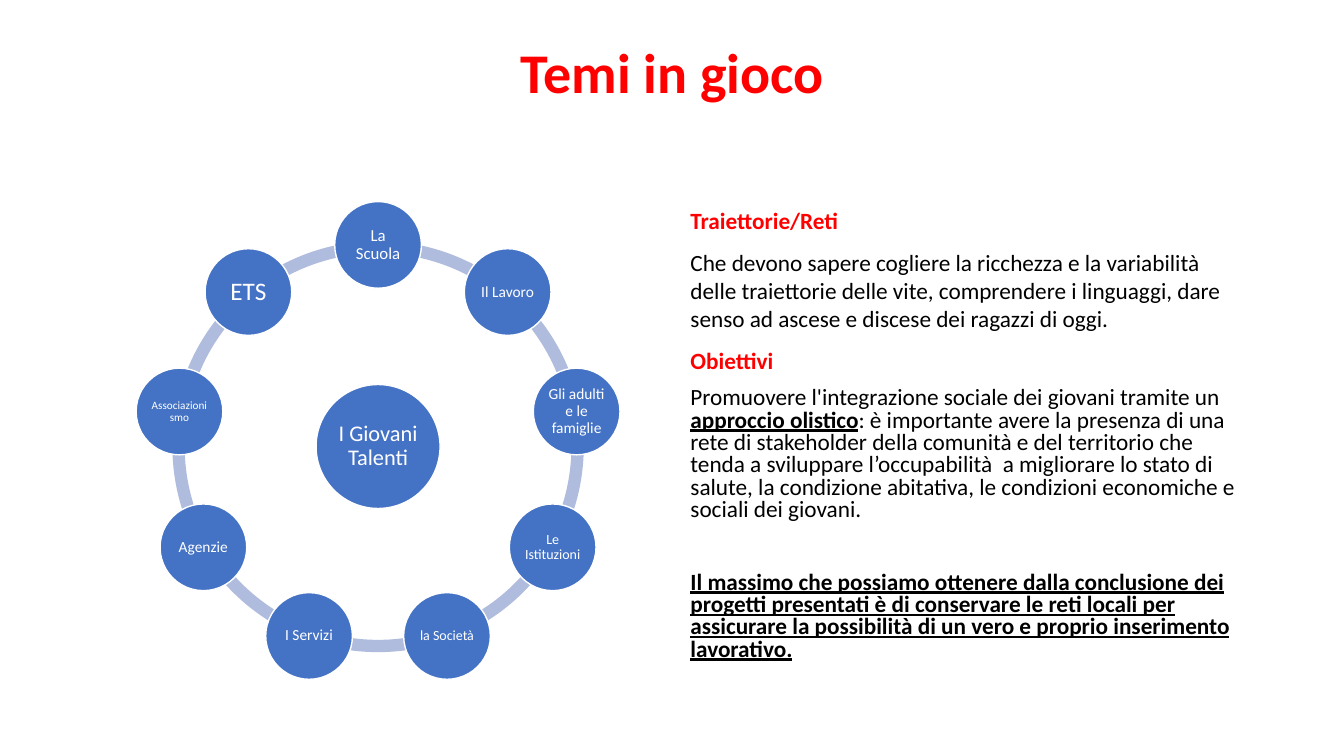
from dataclasses import dataclass
from math import cos, radians, sin

from pptx import Presentation
from pptx.dml.color import RGBColor
from pptx.enum.shapes import MSO_SHAPE as Preset
from pptx.enum.text import MSO_ANCHOR as Anchor, PP_ALIGN as Align
from pptx.shapes.autoshape import Shape
from pptx.slide import Slide
from pptx.text.text import TextFrame, _Paragraph as Paragraph
from pptx.util import Inches, Pt


@dataclass(frozen=True)
class Theme:
    """Colours and type sizes of the slide."""
    font: str = "Calibri"
    accent: str = "FF0000"
    ink: str = "000000"
    paper: str = "FFFFFF"
    node: str = "4472C4"
    ring: str = "B0BCDE"
    title_size: float = 40
    body_size: float = 16.6
    hub_size: float = 16
    large: float = 18
    medium: float = 12
    regular: float = 11
    small: float = 10
    tiny: float = 8


@dataclass(frozen=True)
class Topic:
    """A circle label with its size and inner margin."""
    label: str
    size: float
    margin: float = 0.02


@dataclass(frozen=True)
class Words:
    """A stretch of body text in one style."""
    text: str
    color: str
    bold: bool = False
    underline: bool = False


@dataclass(frozen=True)
class Passage:
    """A body paragraph and its spacing."""
    words: tuple[Words, ...]
    before: float = 10
    leading: float = 1.0


THEME = Theme()
CENTER_X, CENTER_Y = 3.75, 4.43
ORBIT = 2.0
RING_DIAMETER = 4.08
RING_THICKNESS = 0.03
HUB_DIAMETER = 1.23
TOPIC_DIAMETER = 0.86
DEGREES_TO_ADJUSTMENT = 0.6

HUB = Topic("I Giovani Talenti", THEME.hub_size)
TOPICS = (
    Topic("La Scuola", THEME.medium),
    Topic("Il Lavoro", THEME.regular),
    Topic("Gli adulti e le famiglie", THEME.regular),
    Topic("Le Istituzioni", THEME.small, 0.01),
    Topic("la Società", THEME.small, 0.01),
    Topic("I Servizi", THEME.regular),
    Topic("Agenzie", THEME.regular),
    Topic("Associazionismo", THEME.tiny, 0.01),
    Topic("ETS", THEME.large, 0.03),
)
PASSAGES = (
    Passage((Words("Traiettorie/Reti", THEME.accent, bold=True),), before=0),
    Passage((Words(
        "Che devono sapere cogliere la ricchezza e la variabilità delle traiettorie "
        "delle vite, comprendere i linguaggi, dare senso ad ascese e discese dei "
        "ragazzi di oggi.", THEME.ink),)),
    Passage((Words("Obiettivi", THEME.accent, bold=True),)),
    Passage((
        Words("Promuovere l'integrazione sociale dei giovani tramite un ", THEME.ink),
        Words("approccio olistico", THEME.ink, bold=True, underline=True),
        Words(
            ": è importante avere la presenza di una rete di stakeholder della "
            "comunità e del territorio che tenda a sviluppare l’occupabilità  a "
            "migliorare lo stato di salute, la condizione abitativa, le condizioni "
            "economiche e sociali dei giovani.", THEME.ink),
    ), leading=0.8),
    Passage((Words(
        "Il massimo che possiamo ottenere dalla conclusione dei progetti presentati "
        "è di conservare le reti locali per assicurare la possibilità di un vero e "
        "proprio inserimento lavorativo.", THEME.ink, bold=True, underline=True),),
        before=36, leading=0.8),
)


def add_words(paragraph: Paragraph, words: Words, size: float) -> None:
    """Append one styled run."""
    run = paragraph.add_run()
    run.text = words.text
    run.font.name = THEME.font
    run.font.size = Pt(size)
    run.font.bold = words.bold
    run.font.underline = words.underline
    run.font.color.rgb = RGBColor.from_string(words.color)


def add_centered(slide: Slide, preset: Preset, x: float, y: float,
                 diameter: float, fill: str) -> Shape:
    """Draw a flat round shape around a centre point."""
    shape = slide.shapes.add_shape(
        preset, Inches(x - diameter / 2), Inches(y - diameter / 2),
        Inches(diameter), Inches(diameter))
    shape.shadow.inherit = False
    shape.fill.solid()
    shape.fill.fore_color.rgb = RGBColor.from_string(fill)
    shape.line.fill.background()
    return shape


def add_arc(slide: Slide, start: float, end: float) -> None:
    """Draw one segment of the ring between two angles."""
    arc = add_centered(slide, Preset.BLOCK_ARC, CENTER_X, CENTER_Y,
                       RING_DIAMETER, THEME.ring)
    arc.adjustments[0] = start % 360 * DEGREES_TO_ADJUSTMENT
    arc.adjustments[1] = end % 360 * DEGREES_TO_ADJUSTMENT
    arc.adjustments[2] = RING_THICKNESS


def add_topic(slide: Slide, topic: Topic, x: float, y: float, diameter: float) -> None:
    """Draw a labelled circle."""
    circle = add_centered(slide, Preset.OVAL, x, y, diameter, THEME.node)
    circle.line.color.rgb = RGBColor.from_string(THEME.paper)
    circle.line.width = Pt(1)
    frame = circle.text_frame
    frame.word_wrap = True
    frame.vertical_anchor = Anchor.MIDDLE
    frame.margin_left = frame.margin_right = Inches(topic.margin)
    frame.margin_top = frame.margin_bottom = Inches(topic.margin)
    label = frame.paragraphs[0]
    label.alignment = Align.CENTER
    label.line_spacing = 0.9
    add_words(label, Words(topic.label, THEME.paper), topic.size)


def add_wheel(slide: Slide) -> None:
    """Draw the ring, the hub and the topics around it."""
    step = 360 / len(TOPICS)
    angles = [-90 + step * index for index in range(len(TOPICS))]
    for angle in angles:
        add_arc(slide, angle, angle + step)
    add_topic(slide, HUB, CENTER_X, CENTER_Y, HUB_DIAMETER)
    for topic, angle in zip(TOPICS, angles):
        add_topic(slide, topic, CENTER_X + ORBIT * cos(radians(angle)),
                  CENTER_Y + ORBIT * sin(radians(angle)), TOPIC_DIAMETER)


def add_frame(slide: Slide, left: float, top: float,
              width: float, height: float) -> TextFrame:
    """Add a wrapping text box and return its frame."""
    frame = slide.shapes.add_textbox(
        Inches(left), Inches(top), Inches(width), Inches(height)).text_frame
    frame.word_wrap = True
    return frame


def add_title(slide: Slide) -> None:
    """Write the slide heading."""
    heading = add_frame(slide, 0.92, 0.4, 11.5, 1.45).paragraphs[0]
    heading.alignment = Align.CENTER
    heading.line_spacing = 0.9
    add_words(heading, Words("Temi in gioco", THEME.accent, bold=True), THEME.title_size)


def add_body(slide: Slide) -> None:
    """Write the passages beside the wheel."""
    frame = add_frame(slide, 6.75, 2, 5.67, 4.76)
    for index, passage in enumerate(PASSAGES):
        paragraph = frame.add_paragraph() if index else frame.paragraphs[0]
        paragraph.space_before = Pt(passage.before)
        paragraph.line_spacing = passage.leading
        for words in passage.words:
            add_words(paragraph, words, THEME.body_size)


def main() -> None:
    """Build and save the slide."""
    deck = Presentation()
    deck.slide_width, deck.slide_height = Inches(13.33), Inches(7.5)
    slide = deck.slides.add_slide(deck.slide_layouts[6])
    add_title(slide)
    add_wheel(slide)
    add_body(slide)
    deck.save("out.pptx")


if __name__ == "__main__":
    main()
